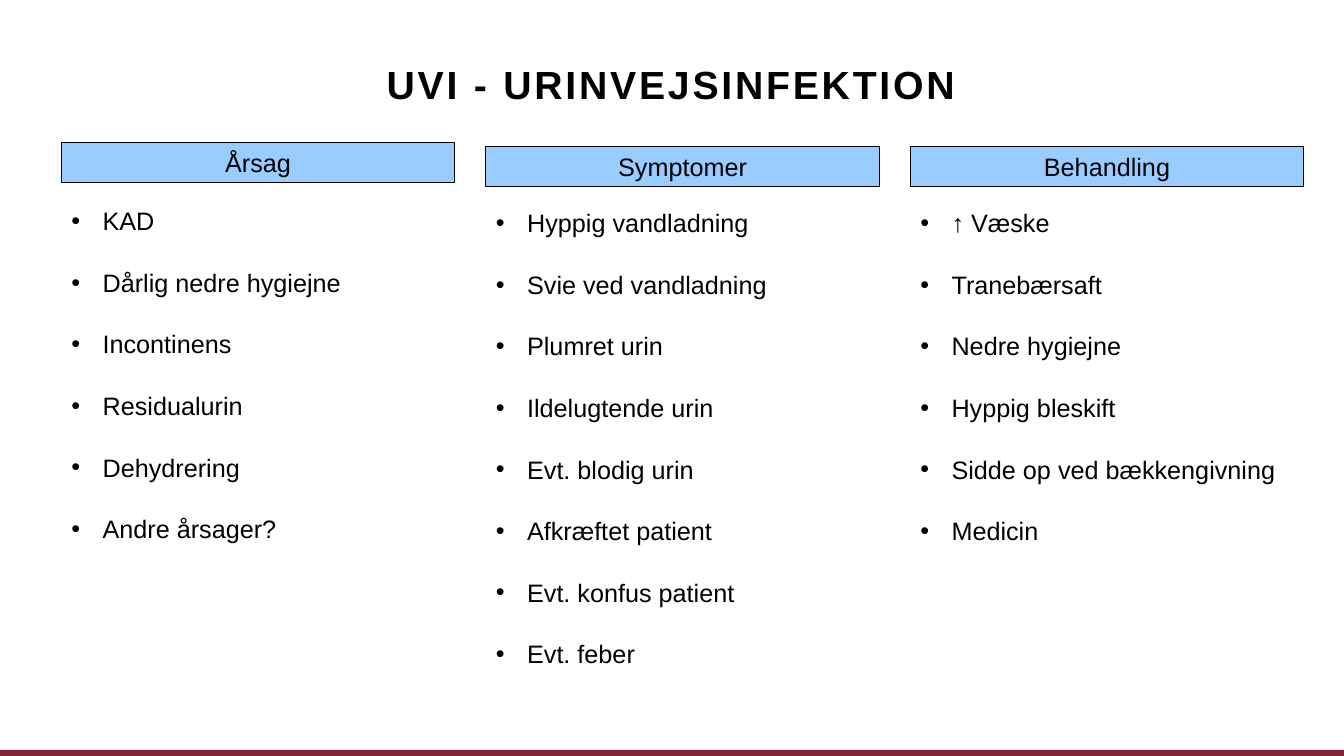
from lxml.etree import SubElement
from pptx import Presentation
from pptx.dml.color import RGBColor
from pptx.enum.shapes import MSO_SHAPE
from pptx.enum.text import MSO_ANCHOR, PP_ALIGN
from pptx.oxml.ns import qn
from pptx.util import Inches, Pt

COLORS = {"text": "000000", "header": "99CCFF", "paper": "FFFFFF", "footer": "822433"}
FONT = "Arial"
SLIDE_W, SLIDE_H = 13.33, 7.5
COL_LEFT, COL_STEP, COL_W = 0.61, 4.21, 3.9
HEADER_H = 0.4
INDENT = 0.31

# heading, header top, list top, list height, items
COLUMNS = [
    ("Årsag", 1.41, 1.98, 3.43,
     ["KAD", "Dårlig nedre hygiejne", "Incontinens", "Residualurin",
      "Dehydrering", "Andre årsager?"]),
    ("Symptomer", 1.45, 2, 4.64,
     ["Hyppig vandladning", "Svie ved vandladning", "Plumret urin",
      "Ildelugtende urin", "Evt. blodig urin", "Afkræftet patient",
      "Evt. konfus patient", "Evt. feber"]),
    ("Behandling", 1.45, 2, 3.74,
     ["↑ Væske", "Tranebærsaft", "Nedre hygiejne", "Hyppig bleskift",
      "Sidde op ved bækkengivning", "Medicin"]),
]


def rgb(name):
    return RGBColor.from_string(COLORS[name])


def style(p, size, bold=False):
    for r in p.runs:
        r.font.name = FONT
        r.font.size = Pt(size)
        r.font.bold = bold
        r.font.color.rgb = rgb("text")


def add_box(slide, box, fill, line=None):
    sp = slide.shapes.add_shape(MSO_SHAPE.RECTANGLE, *map(Inches, box))
    sp.shadow.inherit = False
    sp.fill.solid()
    sp.fill.fore_color.rgb = rgb(fill)
    if line:
        sp.line.color.rgb = rgb(line)
        sp.line.width = Pt(0.75)
    else:
        sp.line.fill.background()
    sp.text_frame.word_wrap = True
    return sp


def add_title(slide, box, text):
    tf = slide.shapes.add_textbox(*map(Inches, box)).text_frame
    tf.word_wrap = True
    tf.margin_left = tf.margin_right = tf.margin_top = tf.margin_bottom = 0
    tf.vertical_anchor = MSO_ANCHOR.BOTTOM
    p = tf.paragraphs[0]
    p.text = text
    p.alignment = PP_ALIGN.CENTER
    p.line_spacing = 0.9
    style(p, 28, bold=True)
    p.runs[0].font._element.set("spc", "200")


def add_header(slide, box, text):
    tf = add_box(slide, box, "header", "text").text_frame
    tf.vertical_anchor = MSO_ANCHOR.MIDDLE
    p = tf.paragraphs[0]
    p.text = text
    p.alignment = PP_ALIGN.CENTER
    style(p, 18)


def add_bullet(p):
    pPr = p._p.get_or_add_pPr()
    pPr.set("marL", str(Inches(INDENT)))
    pPr.set("indent", str(-Inches(INDENT)))
    SubElement(pPr, qn("a:buFont")).set("typeface", FONT)
    SubElement(pPr, qn("a:buChar")).set("char", "•")


def add_list(slide, box, items):
    tf = add_box(slide, box, "paper", "paper").text_frame
    tf.vertical_anchor = MSO_ANCHOR.TOP
    tf.margin_top = Inches(0.06)
    for i, item in enumerate(items):
        p = tf.add_paragraph() if i else tf.paragraphs[0]
        p.text = item
        p.alignment = PP_ALIGN.LEFT
        add_bullet(p)
        if i:
            p.space_before = Pt(22.4)
        style(p, 18)


def add_column(slide, left, heading, header_top, list_top, list_h, items):
    add_header(slide, (left, header_top, COL_W, HEADER_H), heading)
    add_list(slide, (left, list_top, COL_W, list_h), items)


def main():
    prs = Presentation()
    prs.slide_width, prs.slide_height = Inches(SLIDE_W), Inches(SLIDE_H)
    slide = prs.slides.add_slide(prs.slide_layouts[6])
    add_box(slide, (0, SLIDE_H - 0.06, SLIDE_W, 0.06), "footer")
    add_title(slide, (0.83, 0.34, 11.65, 0.73), "UVI - URINVEJSINFEKTION")
    for i, column in enumerate(COLUMNS):
        add_column(slide, COL_LEFT + i * COL_STEP, *column)
    prs.save("out.pptx")


if __name__ == "__main__":
    main()
